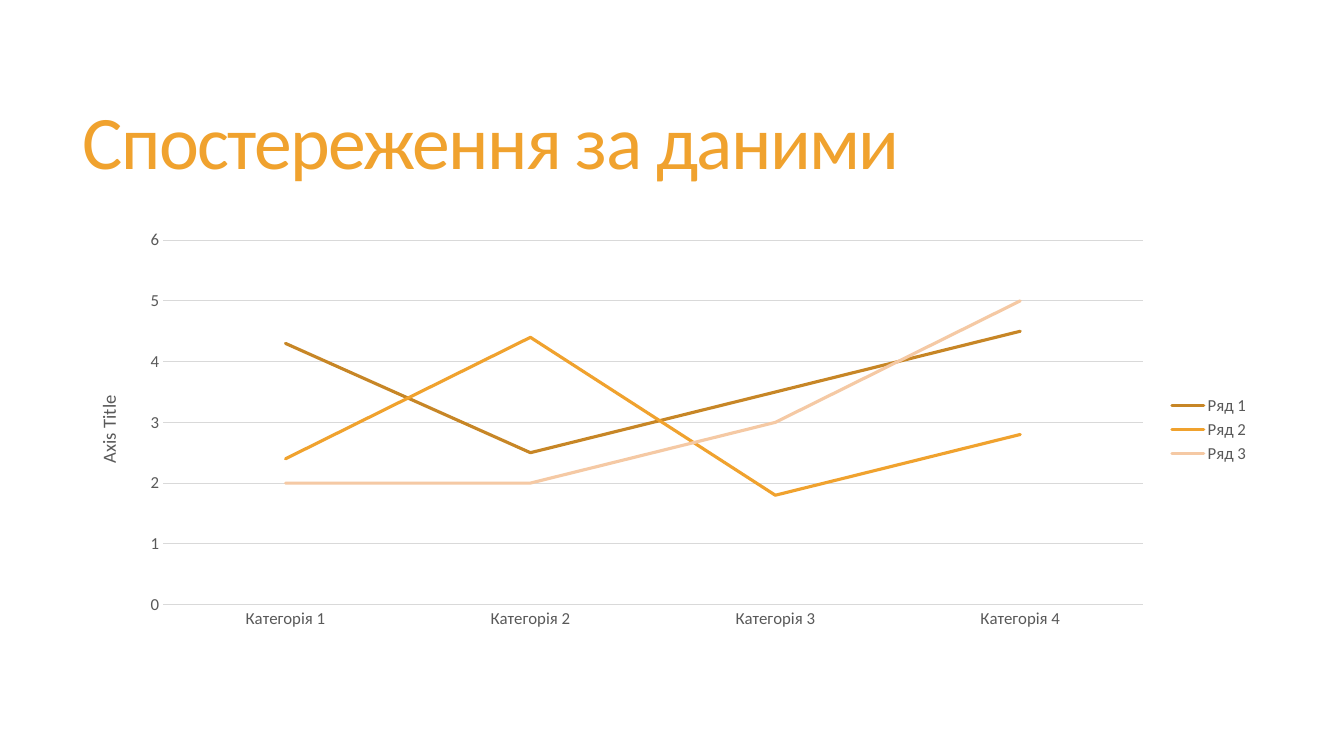
from dataclasses import dataclass

from pptx import Presentation
from pptx.chart.data import CategoryChartData as ChartData
from pptx.dml.color import RGBColor as RGB
from pptx.enum.chart import XL_CHART_TYPE as Kind
from pptx.enum.chart import XL_LEGEND_POSITION as Side
from pptx.enum.chart import XL_TICK_MARK as Tick
from pptx.enum.text import MSO_ANCHOR as Anchor
from pptx.enum.text import PP_ALIGN as Align
from pptx.util import Inches, Pt


@dataclass(frozen=True)
class Theme:
    face: str = "Calibri"
    head: str = "F0A22E"
    text: str = "595959"
    grid: str = "D9D9D9"
    lines: tuple = ("C78626", "F0A22E", "F5C9A4")
    big: float = 54
    mid: float = 13.3
    small: float = 12
    thin: float = 0.75
    thick: float = 2.25


def style(font, size, color):
    font.name, font.size, font.bold = theme.face, Pt(size), False
    font.color.rgb = RGB.from_string(color)


def draw(line, width, color):
    line.width = Pt(width)
    line.color.rgb = RGB.from_string(color)


theme = Theme()
deck = Presentation()
deck.slide_width, deck.slide_height = Inches(13.33), Inches(7.5)
wide, high = deck.slide_width, deck.slide_height
slide = deck.slides.add_slide(deck.slide_layouts[5])

# Title
title = slide.shapes.title
title.left, title.top = int(wide * 0.054), int(high * 0.073)
title.width, title.height = int(wide * 0.884), int(high * 0.241)
frame = title.text_frame
frame.text = "Спостереження за даними"
frame.vertical_anchor = Anchor.MIDDLE
frame.word_wrap = True
para = frame.paragraphs[0]
para.alignment = Align.LEFT
para.line_spacing = 0.85
style(para.font, theme.big, theme.head)
para.runs[0]._r.get_or_add_rPr().set("spc", "-120")

# Line chart
rows = [(4.3, 2.5, 3.5, 4.5), (2.4, 4.4, 1.8, 2.8), (2, 2, 3, 5)]
data = ChartData()
data.categories = [f"Категорія {n}" for n in range(1, 5)]
for n, row in enumerate(rows, 1):
    data.add_series(f"Ряд {n}", row)
chart = slide.shapes.add_chart(
    Kind.LINE, int(wide * 0.0555), int(high * 0.2935),
    int(wide * 0.882), int(high * 0.549), data).chart
chart.has_title = False
style(chart.font, theme.small, theme.text)
chart.plots[0].vary_by_categories = False
for line, color in zip(chart.plots[0].series, theme.lines):
    line.smooth = False
    draw(line.format.line, theme.thick, color)
    line.format.line._get_or_add_ln().set("cap", "rnd")

# Axes
across, up = chart.category_axis, chart.value_axis
for axis in (across, up):
    axis.major_tick_mark = axis.minor_tick_mark = Tick.NONE
    style(axis.tick_labels.font, theme.small, theme.text)
draw(across.format.line, theme.thin, theme.grid)
up.format.line.fill.background()
up.minimum_scale, up.maximum_scale, up.major_unit = 0, 6, 1
up.has_major_gridlines = True
draw(up.major_gridlines.format.line, theme.thin, theme.grid)
label = up.axis_title.text_frame
label.text = "Axis Title"
style(label.paragraphs[0].font, theme.mid, theme.text)
turn = label._txBody.bodyPr
turn.set("rot", "-5400000")
turn.set("vert", "horz")

# Legend
chart.has_legend = True
chart.legend.position = Side.RIGHT
chart.legend.include_in_layout = False
style(chart.legend.font, theme.small, theme.text)

deck.save("out.pptx")
